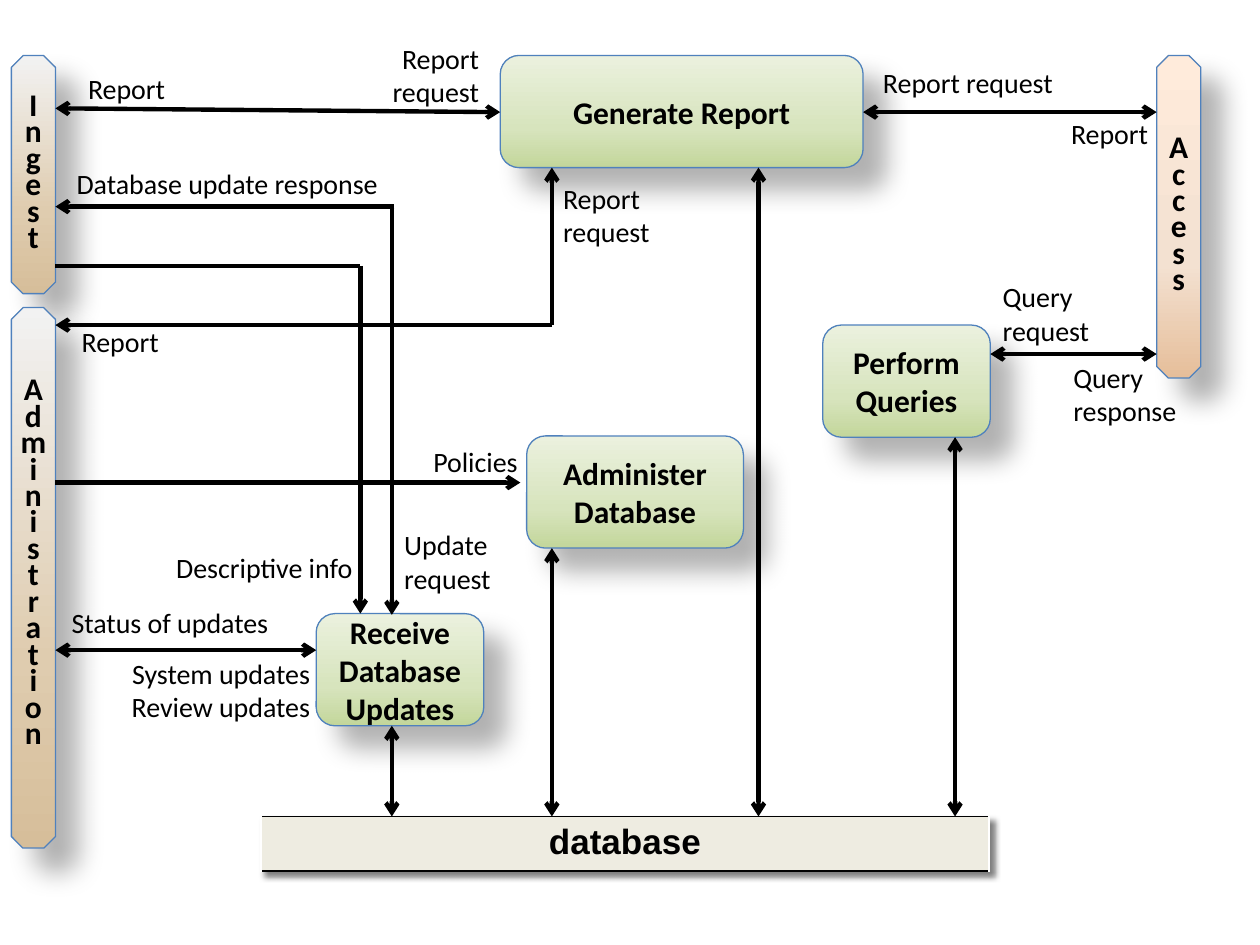
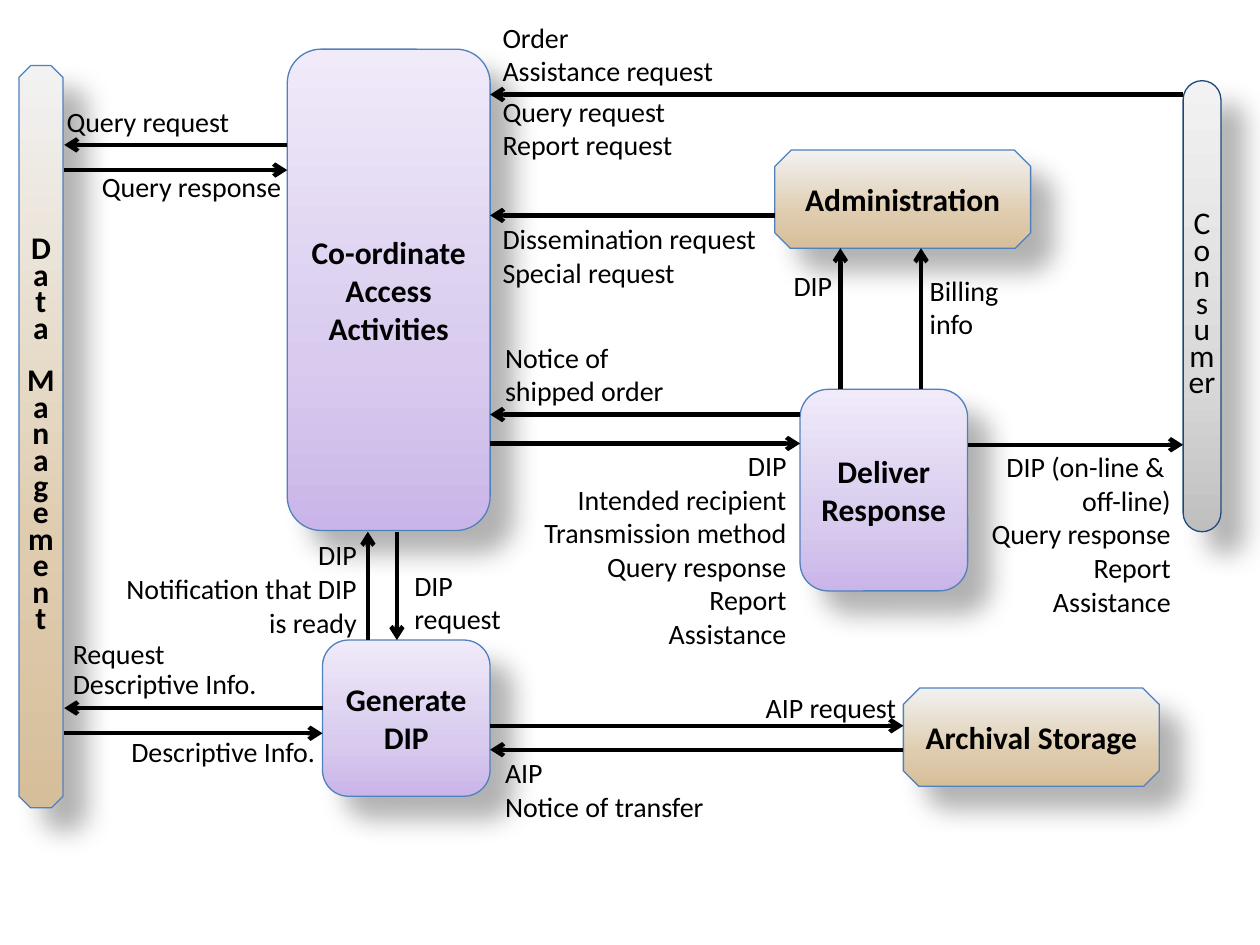
from copy import deepcopy
from lxml.etree import SubElement
from pptx import Presentation
from pptx.dml.color import RGBColor
from pptx.enum.shapes import MSO_CONNECTOR as Connector, MSO_SHAPE as Shape
from pptx.enum.text import MSO_ANCHOR as Anchor, MSO_AUTO_SIZE as AutoSize, PP_ALIGN as Align
from pptx.oxml.ns import qn
from pptx.util import Inches, Pt

CELL = Inches(0.1)
COLUMNS, ROWS = 100, 75
FONT = "Calibri"
COLORS = {
    "ink": "000000",
    "edge": "4F81BD",
    "navy": "1F497D",
    "store": "EEECE1",
}
GRADIENTS = {
    "green": ("C3D69B", "D7E4BD", "EBF1DE"),
    "violet": ("C9B5E8", "D8CBEE", "F0EAF9"),
    "tan": ("D6BE9A", "DFCCAF", "F2F2F2"),
    "peach": ("E6BE9A", "F3E1D1", "FFEBDB"),
    "gray": ("BFBFBF", "D9D9D9", "F2F2F2"),
}
SNIP = Shape.SNIP_2_SAME_RECTANGLE
ROUND = Shape.ROUNDED_RECTANGLE
KINDS = {
    "process": (ROUND, (0.167,), "edge"),
    "entity": (SNIP, (0.167, 0.156), "edge"),
    "bar": (SNIP, (0.271, 0.26), "edge"),
    "pill": (ROUND, (0.5,), "navy"),
}
LETTER_SPACING = 0.7
LETTER_GAP = Pt(15)

INGEST_EDGE, ACCESS_EDGE = 4.4, 91.8
STORE_LEFT, STORE_TOP, STORE_WIDTH, STORE_HEIGHT = 20.7, 64.8, 57.8, 4.3
REPORT_TOP, REPORT_HEIGHT = 4.4, 8.9
REPORT_BOTTOM = REPORT_TOP + REPORT_HEIGHT
UPDATE_COLUMN, INFO_COLUMN, ADMIN_COLUMN = 31.1, 28.6, 43.8
QUERY_COLUMN, REPORT_COLUMN = 75.8, 60.2
MANAGE_EDGE, ACCESS_LEFT, ACCESS_RIGHT = 5.1, 22.8, 38.9
DELIVER_LEFT, DELIVER_RIGHT, CONSUMER_EDGE = 63.5, 76.8, 93.9
ARCHIVE_LEFT, GENERATE_LEFT = 71.7, 25.6

DIAGRAMS = [
    {
        "blocks": [
            ("process", "green", 39.7, REPORT_TOP, 28.8, REPORT_HEIGHT, "Generate Report"),
            ("process", "green", 25.1, 48.7, 13.3, 8.9, "Receive Database Updates"),
            ("process", "green", 41.8, 34.6, 17.2, 8.9, "Administer Database"),
            ("process", "green", 65.3, 25.8, 13.3, 8.9, "Perform Queries"),
            ("bar", "tan", 0.9, REPORT_TOP, 3.5, 18.9, "Ingest"),
            ("bar", "tan", 0.9, 24.4, 3.5, 42.9, "Administration"),
            ("bar", "peach", ACCESS_EDGE, REPORT_TOP, 3.5, 25.6, "Access"),
        ],
        "arrows": [
            (39.7, 8.9, INGEST_EDGE, 8.6, "both"),
            (68.5, 8.9, ACCESS_EDGE, 8.9, "both"),
            (REPORT_COLUMN, REPORT_BOTTOM, REPORT_COLUMN, STORE_TOP, "both"),
            (UPDATE_COLUMN, 16.4, UPDATE_COLUMN, 48.8, "to"),
            (31.3, 16.4, INGEST_EDGE, 16.4, "to"),
            (INGEST_EDGE, 21.1, INFO_COLUMN, 21.1, "none"),
            (INFO_COLUMN, 21.1, INFO_COLUMN, 48.7, "to"),
            (ADMIN_COLUMN, 25.8, ADMIN_COLUMN, REPORT_BOTTOM, "to"),
            (ADMIN_COLUMN, 25.8, INGEST_EDGE, 25.8, "to"),
            (INGEST_EDGE, 38.3, 41.3, 38.3, "to"),
            (INGEST_EDGE, 51.6, 25.1, 51.6, "both"),
            (UPDATE_COLUMN, 57.6, UPDATE_COLUMN, STORE_TOP, "both"),
            (ADMIN_COLUMN, 43.5, ADMIN_COLUMN, STORE_TOP, "both"),
            (QUERY_COLUMN, 34.7, QUERY_COLUMN, STORE_TOP, "both"),
            (78.6, 28.1, ACCESS_EDGE, 28.1, "both"),
        ],
        "labels": [
            (6, 5.2, 14.1, 3.7, "left", "Report"),
            (27.8, 2.8, 11.2, 6.4, "right", "Report request"),
            (69.1, 4.7, 16.3, 3.7, "left", "Report request"),
            (74.9, 8.8, 17.2, 3.7, "right", "Report"),
            (78.6, 21.7, 11.2, 6.4, "left", "Query\nrequest"),
            (84.2, 28.1, 11.2, 6.4, "left", "Query\nresponse"),
            (33.4, 34.8, 14.1, 3.7, "left", "Policies"),
            (5.5, 25.3, 14.1, 3.7, "left", "Report"),
            (13, 43.2, 16.1, 3.7, "left", "Descriptive info"),
            (31.1, 41.4, 12.1, 6.4, "left", "Update\nrequest"),
            (5.1, 12.7, 27, 3.7, "left", "Database update response"),
            (43.7, 13.9, 11.2, 6.4, "left", "Report request"),
            (4.7, 47.6, 20.4, 3.7, "left", "Status of updates"),
            (7.8, 51.6, 17.8, 6.4, "right", "System updates\nReview updates"),
        ],
    },
    {
        "blocks": [
            ("process", "violet", ACCESS_LEFT, 3.9, 16.1, 38.2, "Co-ordinate Access Activities"),
            ("process", "violet", GENERATE_LEFT, 50.8, 13.3, 12.4, "Generate\nDIP"),
            ("process", "violet", DELIVER_LEFT, 30.9, 13.3, 16, "Deliver Response"),
            ("entity", "tan", 61.5, 11.9, 20.3, 7.8, "Administration"),
            ("entity", "tan", ARCHIVE_LEFT, 54.6, 20.3, 7.8, "Archival Storage"),
            ("bar", "tan", 1.5, 5.2, 3.5, 58.9, "Data Management"),
            ("pill", "gray", CONSUMER_EDGE, 6.4, 3, 35.8, "Consumer"),
        ],
        "arrows": [
            (29.2, 50.8, 29.2, 42.2, "to"),
            (31.5, 42.2, 31.5, 50.8, "to"),
            (ACCESS_LEFT, 11.5, MANAGE_EDGE, 11.5, "to"),
            (MANAGE_EDGE, 13.5, ACCESS_LEFT, 13.5, "to"),
            (66.7, 30.9, 66.7, 19.7, "to"),
            (73.1, 30.9, 73.1, 19.7, "to"),
            (CONSUMER_EDGE, 7.5, ACCESS_RIGHT, 7.5, "to"),
            (61.5, 17.1, ACCESS_RIGHT, 17.1, "to"),
            (DELIVER_RIGHT, 35.3, CONSUMER_EDGE, 35.3, "to"),
            (DELIVER_LEFT, 32.9, ACCESS_RIGHT, 32.9, "to"),
            (ACCESS_RIGHT, 35.2, DELIVER_LEFT, 35.2, "to"),
            (ARCHIVE_LEFT, 59.5, ACCESS_RIGHT, 59.5, "to"),
            (ACCESS_RIGHT, 57.6, ARCHIVE_LEFT, 57.6, "to"),
            (GENERATE_LEFT, 56.2, MANAGE_EDGE, 56.2, "to"),
            (MANAGE_EDGE, 58.2, GENERATE_LEFT, 58.2, "to"),
        ],
        "labels": [
            (38.9, 1.1, 22.6, 5.9, "left", "Order\nAssistance request"),
            (38.9, 7, 22.6, 6.4, "left", "Query request\nReport request"),
            (38.9, 17.1, 22.6, 6.4, "left", "Dissemination request\nSpecial request"),
            (62, 20.8, 7.6, 3.7, "left", "DIP"),
            (72.8, 21.2, 16.1, 6.4, "left", "Billing\ninfo"),
            (75, 35.2, 18.9, 14.5, "right",
             "DIP (on-line & \noff-line)\nQuery response\nReport\nAssistance"),
            (58.7, 54.3, 13.4, 3.7, "right", "AIP request"),
            (39.1, 59.5, 22.5, 6.4, "left", "AIP\nNotice of transfer"),
            (4.8, 50.3, 20.7, 5.9, "left", "Request\nDescriptive Info."),
            (8.7, 57.8, 17.3, 3.7, "right", "Descriptive Info."),
            (4.3, 7.8, 16.1, 3.7, "left", "Query request"),
            (5.6, 13, 17.7, 3.7, "right", "Query response"),
            (40.9, 35.1, 22.5, 17.2, "right",
             "DIP\nIntended recipient\nTransmission method\nQuery response\nReport\nAssistance"),
            (39.1, 26.5, 16.1, 6.4, "left", "Notice of shipped order"),
            (7.5, 42.2, 21.8, 9.1, "right", "DIP\nNotification that DIP is ready"),
            (31.9, 44.6, 19.4, 6.4, "left", "DIP\nrequest"),
        ],
    },
]


def write_lines(frame, lines, size, align, bold=False, spacing=None, font=FONT):
    frame.text = "\n".join(lines)
    for para in frame.paragraphs:
        para.alignment = align
        para.line_spacing = spacing
        para.font.name = font
        para.font.size = Pt(size)
        para.font.bold = bold
        para.font.color.rgb = RGBColor.from_string(COLORS["ink"])


def add_shadow(effects, blur, distance, opacity):
    shadow = SubElement(effects, qn("a:outerShdw"), blurRad=str(Pt(blur)), dist=str(Pt(distance)),
                        dir="2700000", algn="tl", rotWithShape="0")
    color = SubElement(shadow, qn("a:srgbClr"), val=COLORS["ink"])
    SubElement(color, qn("a:alpha"), val=str(opacity * 1000))


deck = Presentation()
deck.slide_width, deck.slide_height = COLUMNS * CELL, ROWS * CELL

for diagram in DIAGRAMS:
    page = deck.slides.add_slide(deck.slide_layouts[6])

    for kind, gradient, left, top, width, height, words in diagram["blocks"]:
        preset, adjustments, edge = KINDS[kind]
        block = page.shapes.add_shape(
            preset, *(int(length * CELL) for length in (left, top, width, height)))
        for index, value in enumerate(adjustments):
            block.adjustments[index] = value
        block.fill.gradient()
        block.fill.gradient_angle = 90
        stops = block._element.spPr.find(".//" + qn("a:gsLst"))
        stops.insert(1, deepcopy(stops[0]))
        for stop, position, color in zip(block.fill.gradient_stops, (0, 0.35, 1), GRADIENTS[gradient]):
            stop.position = position
            stop.color.rgb = RGBColor.from_string(color)
        block.line.color.rgb = RGBColor.from_string(COLORS[edge])
        block.line.width = Pt(0.75)
        block.shadow.inherit = False
        add_shadow(block._element.spPr.find(qn("a:effectLst")), 15, 18, 30)

        frame = block.text_frame
        frame.vertical_anchor = Anchor.MIDDLE
        frame.word_wrap = kind != "bar"
        if kind == "bar":
            write_lines(frame, words.replace(" ", ""), 18, Align.CENTER, True, LETTER_SPACING)
            if " " in words:
                frame.paragraphs[words.index(" ")].space_before = LETTER_GAP
            if words == "Administration":
                frame.margin_bottom += LETTER_GAP
        elif kind == "pill":
            frame.margin_left = frame.margin_right = 0
            write_lines(frame, [words], 18, Align.CENTER, False, LETTER_SPACING)
        else:
            write_lines(frame, words.split("\n"), 18, Align.CENTER, True)

    for start_x, start_y, end_x, end_y, ends in diagram["arrows"]:
        arrow = page.shapes.add_connector(
            Connector.STRAIGHT, *(int(length * CELL) for length in (start_x, start_y, end_x, end_y)))
        arrow.line.color.rgb = RGBColor.from_string(COLORS["ink"])
        arrow.line.width = Pt(2.5)
        outline = arrow._element.spPr.find(qn("a:ln"))
        if ends == "both":
            SubElement(outline, qn("a:headEnd"), type="arrow")
        if ends != "none":
            SubElement(outline, qn("a:tailEnd"), type="arrow")
        SubElement(arrow._element.spPr, qn("a:effectLst"))

    for left, top, width, height, side, words in diagram["labels"]:
        box = page.shapes.add_textbox(*(int(length * CELL) for length in (left, top, width, height)))
        box.text_frame.word_wrap = True
        box.text_frame.auto_size = AutoSize.SHAPE_TO_FIT_TEXT
        spacing = 0.9 if words.startswith("Request") else None
        write_lines(box.text_frame, words.split("\n"), 16,
                    Align.RIGHT if side == "right" else Align.LEFT, spacing=spacing)

store = deck.slides[0].shapes.add_table(
    1, 1, *(int(length * CELL) for length in (STORE_LEFT, STORE_TOP, STORE_WIDTH, STORE_HEIGHT))).table
effects = SubElement(store._tbl.tblPr, qn("a:effectLst"))
store._tbl.tblPr.insert(0, effects)
add_shadow(effects, 3, 4, 50)
cell = store.cell(0, 0)
write_lines(cell.text_frame, ["database"], 20, Align.CENTER, True, font="Arial")
borders = cell._tc.get_or_add_tcPr()
for side in ("a:lnT", "a:lnB"):
    border = SubElement(borders, qn(side), w=str(Pt(1)))
    SubElement(SubElement(border, qn("a:solidFill")), qn("a:srgbClr"), val=COLORS["ink"])
cell.fill.solid()
cell.fill.fore_color.rgb = RGBColor.from_string(COLORS["store"])

deck.save("out.pptx")
